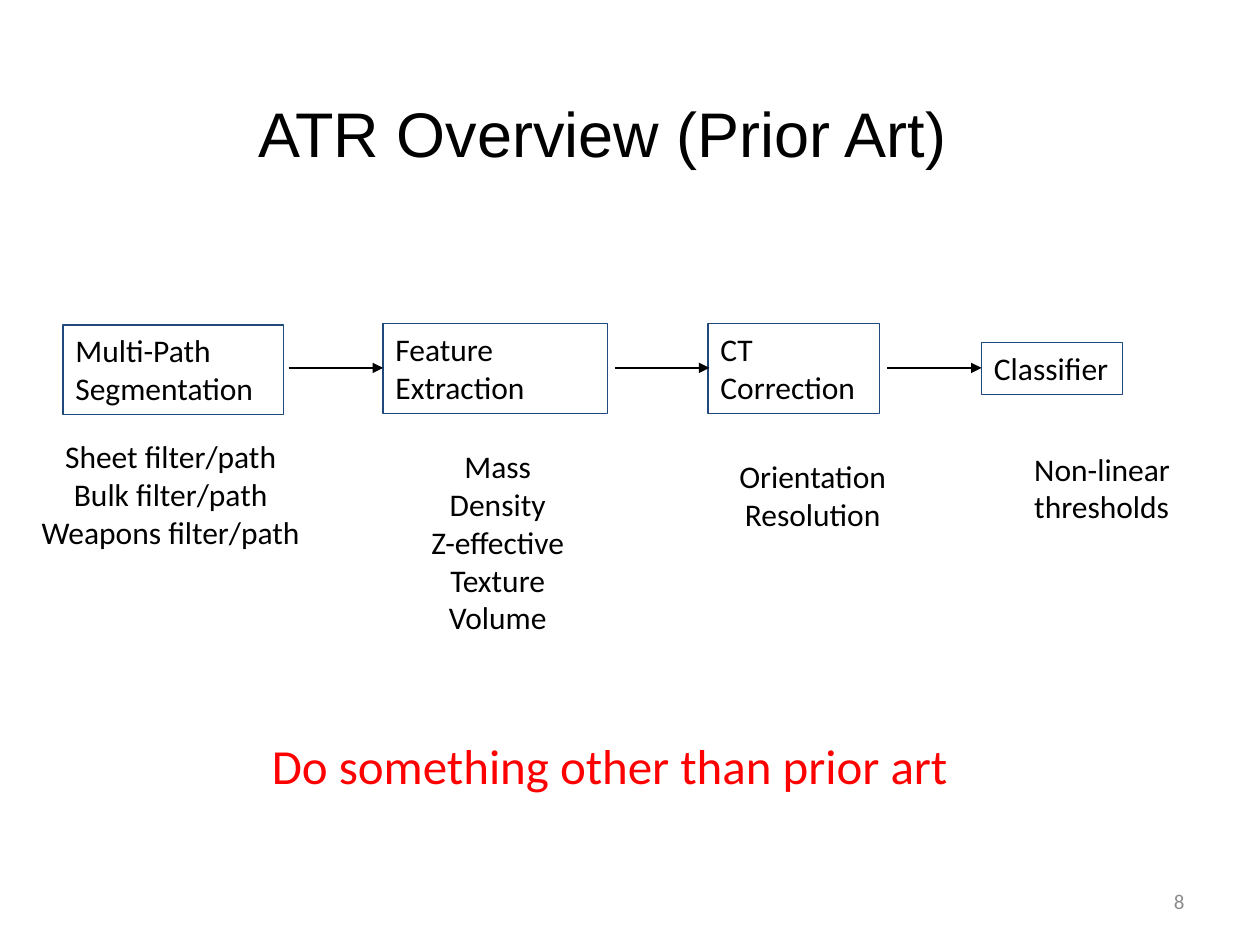
import dataclasses

import lxml.etree
import pptx
import pptx.dml.color
import pptx.enum.shapes
import pptx.enum.text
import pptx.oxml.ns
import pptx.util

Inches = pptx.util.Inches
Align = pptx.enum.text.PP_ALIGN
Anchor = pptx.enum.text.MSO_ANCHOR
AutoSize = pptx.enum.text.MSO_AUTO_SIZE


@dataclasses.dataclass(frozen=True)
class Theme:
    ink: str = "000000"
    border: str = "1F497D"
    accent: str = "FF0000"
    muted: str = "8C8C8C"
    title_font: str = "Arial"
    body_font: str = "Calibri"
    title_size: int = 36
    callout_size: int = 28
    body_size: int = 18
    number_size: int = 12
    line_width: float = 0.75


class SlideBuilder:
    def __init__(self, slide, theme):
        self.slide = slide
        self.theme = theme

    def fill_text(self, box, lines, align=Align.LEFT, wrap=False, size=None,
                  font=None, color=None, anchor=Anchor.TOP, fit=True):
        frame = box.text_frame
        frame_format = {
            "word_wrap": wrap,
            "vertical_anchor": anchor,
            "auto_size": AutoSize.SHAPE_TO_FIT_TEXT if fit else AutoSize.NONE,
        }
        for name, value in frame_format.items():
            setattr(frame, name, value)
        font_format = {
            "name": font or self.theme.body_font,
            "size": pptx.util.Pt(size or self.theme.body_size),
        }
        for index, line in enumerate(lines):
            para = frame.add_paragraph() if index else frame.paragraphs[0]
            para.alignment = align
            span = para.add_run()
            span.text = line
            for name, value in font_format.items():
                setattr(span.font, name, value)
            span.font.color.rgb = self.rgb(color or self.theme.ink)

    def rgb(self, color):
        return pptx.dml.color.RGBColor.from_string(color)

    def outline(self, line, color):
        line.color.rgb = self.rgb(color)
        line.width = pptx.util.Pt(self.theme.line_width)

    def text(self, place, lines, **style):
        box = self.slide.shapes.add_textbox(*map(Inches, place))
        self.fill_text(box, lines, **style)

    def stage(self, place, lines, **style):
        box = self.slide.shapes.add_shape(
            pptx.enum.shapes.MSO_SHAPE.RECTANGLE, *map(Inches, place))
        box.shadow.inherit = False
        box.fill.background()
        self.outline(box.line, self.theme.border)
        self.fill_text(box, lines, **style)

    def arrow(self, left, right, height):
        connector = self.slide.shapes.add_connector(
            pptx.enum.shapes.MSO_CONNECTOR.STRAIGHT,
            *map(Inches, (left, height, right, height)))
        self.outline(connector.line, self.theme.ink)
        qualified = pptx.oxml.ns.qn
        properties = connector._element.spPr
        line = properties.find(qualified("a:ln"))
        lxml.etree.SubElement(line, qualified("a:tailEnd"), type="triangle")
        lxml.etree.SubElement(properties, qualified("a:effectLst"))


def main():
    deck = pptx.Presentation()
    deck.slide_width, deck.slide_height = Inches(10), Inches(7.5)
    theme = Theme()
    page = SlideBuilder(deck.slides.add_slide(deck.slide_layouts[6]), theme)

    page.text((1.92, 0.7, 5.72, 0.71), ["ATR Overview (Prior Art)"],
              align=Align.CENTER, size=theme.title_size, font=theme.title_font)

    stages = [
        ((0.5, 2.58, 1.75, 0.71), ["Multi-Path", "Segmentation"], True),
        ((3.04, 2.57, 1.78, 0.71), ["Feature", "Extraction"], True),
        ((5.62, 2.57, 1.36, 0.71), ["CT", "Correction"], False),
        ((7.79, 2.72, 1.12, 0.41), ["Classifier"], False),
    ]
    for place, lines, wrap in stages:
        page.stage(place, lines, wrap=wrap)

    arrow_length = 0.75
    for left in (2.29, 4.88, 7.04):
        page.arrow(left, left + arrow_length, 2.92)

    details = [
        ((0.22, 3.42, 2.27, 1.9), Align.CENTER,
         ["Sheet filter/path", "Bulk filter/path", "Weapons filter/path"]),
        ((3.31, 3.5, 1.28, 2.2), Align.CENTER,
         ["Mass", "Density", "Z-effective", "Texture", "Volume"]),
        ((5.76, 3.58, 1.38, 0.7), Align.CENTER, ["Orientation", "Resolution"]),
        ((8.11, 3.52, 1.28, 0.7), Align.LEFT, ["Non-linear", "thresholds"]),
    ]
    for place, align, lines in details:
        page.text(place, lines, align=align)

    page.text((2.06, 5.79, 5.63, 0.57), ["Do something other than prior art"],
              size=theme.callout_size, color=theme.accent)
    page.text((7.17, 6.95, 2.33, 0.4), ["8"], align=Align.RIGHT, wrap=True,
              size=theme.number_size, color=theme.muted,
              anchor=Anchor.MIDDLE, fit=False)

    deck.save("out.pptx")


if __name__ == "__main__":
    main()
